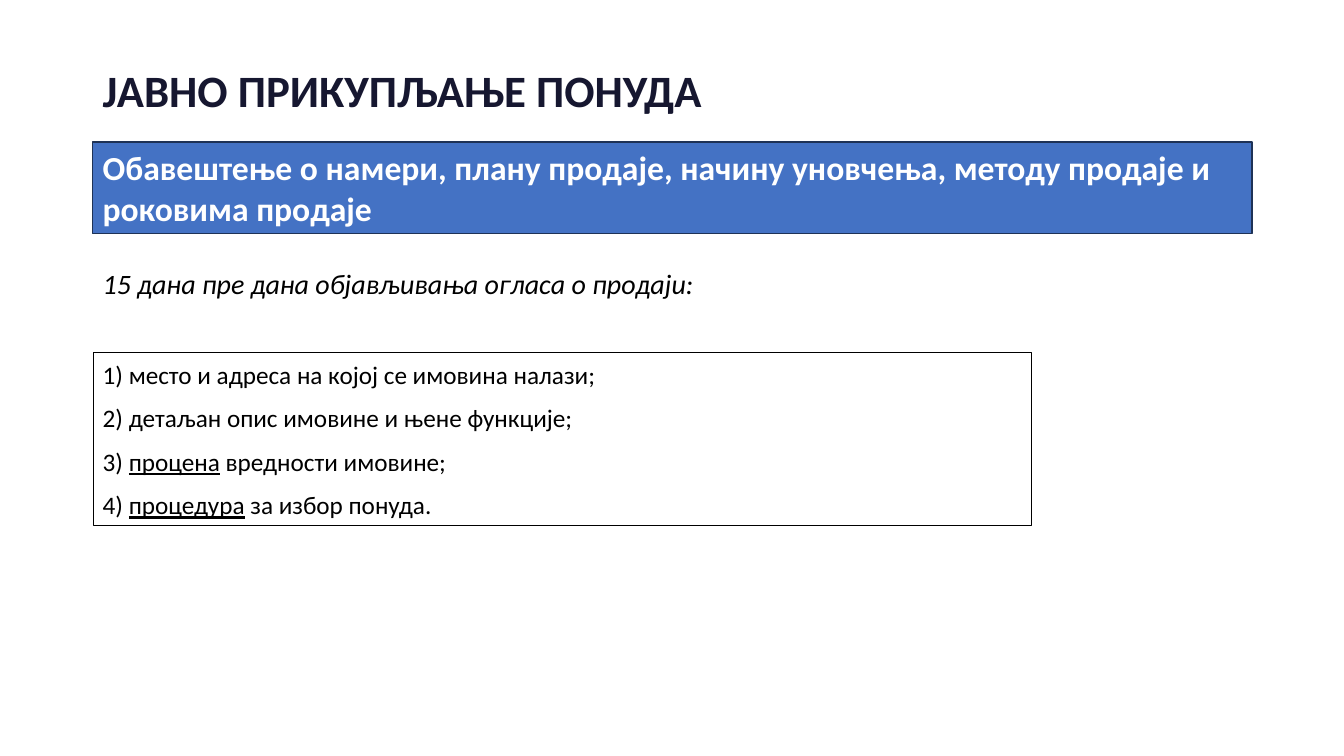
from pptx import Presentation
from pptx.dml.color import RGBColor
from pptx.enum.shapes import MSO_SHAPE
from pptx.enum.text import MSO_ANCHOR, MSO_AUTO_SIZE, PP_ALIGN
from pptx.util import Pt

PX = 9144
RECTANGLE = MSO_SHAPE.RECTANGLE
TOP, BOTTOM = MSO_ANCHOR.TOP, MSO_ANCHOR.BOTTOM
LEFT = PP_ALIGN.LEFT
GROW = MSO_AUTO_SIZE.SHAPE_TO_FIT_TEXT
FONT = "Calibri"
COLORS = {
    "title": "161730",
    "banner": "4472C4",
    "banner_edge": "1E3256",
    "banner_text": "FFFFFF",
    "body": "000000",
}
MARGIN = 92
FULL_WIDTH = 1150
NOTICE_ITEMS = [
    ("1) место и адреса на којој се имовина налази;", "", ""),
    ("2) детаљан опис имовине и њене функције;", "", ""),
    ("3) ", "процена", " вредности имовине;"),
    ("4) ", "процедура", " за избор понуда."),
]


def color(name):
    return RGBColor.from_string(COLORS[name])


def place(top, width, height):
    return [length * PX for length in (MARGIN, top, width, height)]


def prepare_frame(holder, anchor=TOP):
    frame = holder.text_frame
    frame.word_wrap = True
    frame.auto_size = GROW
    frame.vertical_anchor = anchor
    return frame


def style(paragraph, size, color_name, bold=False, italic=False):
    paragraph.alignment = LEFT
    font = paragraph.font
    font.name = FONT
    font.size = Pt(size)
    font.bold = bold
    font.italic = italic
    font.color.rgb = color(color_name)


def add_label(slide, text, top, height, size, color_name, anchor=TOP, **emphasis):
    label = slide.shapes.add_textbox(*place(top, FULL_WIDTH, height))
    paragraph = prepare_frame(label, anchor).paragraphs[0]
    paragraph.text = text
    style(paragraph, size, color_name, **emphasis)
    return paragraph


def add_panel(slide, top, width, height, edge, weight, fill=None):
    panel = slide.shapes.add_shape(RECTANGLE, *place(top, width, height))
    panel.shadow.inherit = False
    if fill:
        panel.fill.solid()
        panel.fill.fore_color.rgb = color(fill)
    else:
        panel.fill.background()
    panel.line.color.rgb = color(edge)
    panel.line.width = Pt(weight)
    return prepare_frame(panel)


def add_notice_items(frame):
    for index, (lead, underlined, rest) in enumerate(NOTICE_ITEMS):
        item = frame.add_paragraph() if index else frame.paragraphs[0]
        item.add_run().text = lead
        if underlined:
            term = item.add_run()
            term.text = underlined
            term.font.underline = True
            item.add_run().text = rest
        item.line_spacing = 1.07
        item.space_after = Pt(8)
        style(item, 18, "body")


def main():
    presentation = Presentation()
    presentation.slide_width = 1333 * PX
    presentation.slide_height = 750 * PX
    slide = presentation.slides.add_slide(presentation.slide_layouts[6])

    title = add_label(slide, "ЈАВНО ПРИКУПЉАЊЕ ПОНУДА", 62, 59, 32, "title",
                      anchor=BOTTOM, bold=True)
    title.line_spacing = 0.9

    banner = add_panel(slide, 141, FULL_WIDTH, 91, "banner_edge", 1, fill="banner")
    notice = banner.paragraphs[0]
    notice.text = ("Обавештење о намери, плану продаје, начину уновчења, "
                   "методу продаје и роковима продаје")
    style(notice, 24, "banner_text", bold=True)

    add_notice_items(add_panel(slide, 349, 931, 172, "body", 0.25))
    add_label(slide, "15 дана пре дана објављивања огласа о продаји:",
              259, 44, 20, "body", italic=True)

    presentation.save("out.pptx")


if __name__ == "__main__":
    main()
